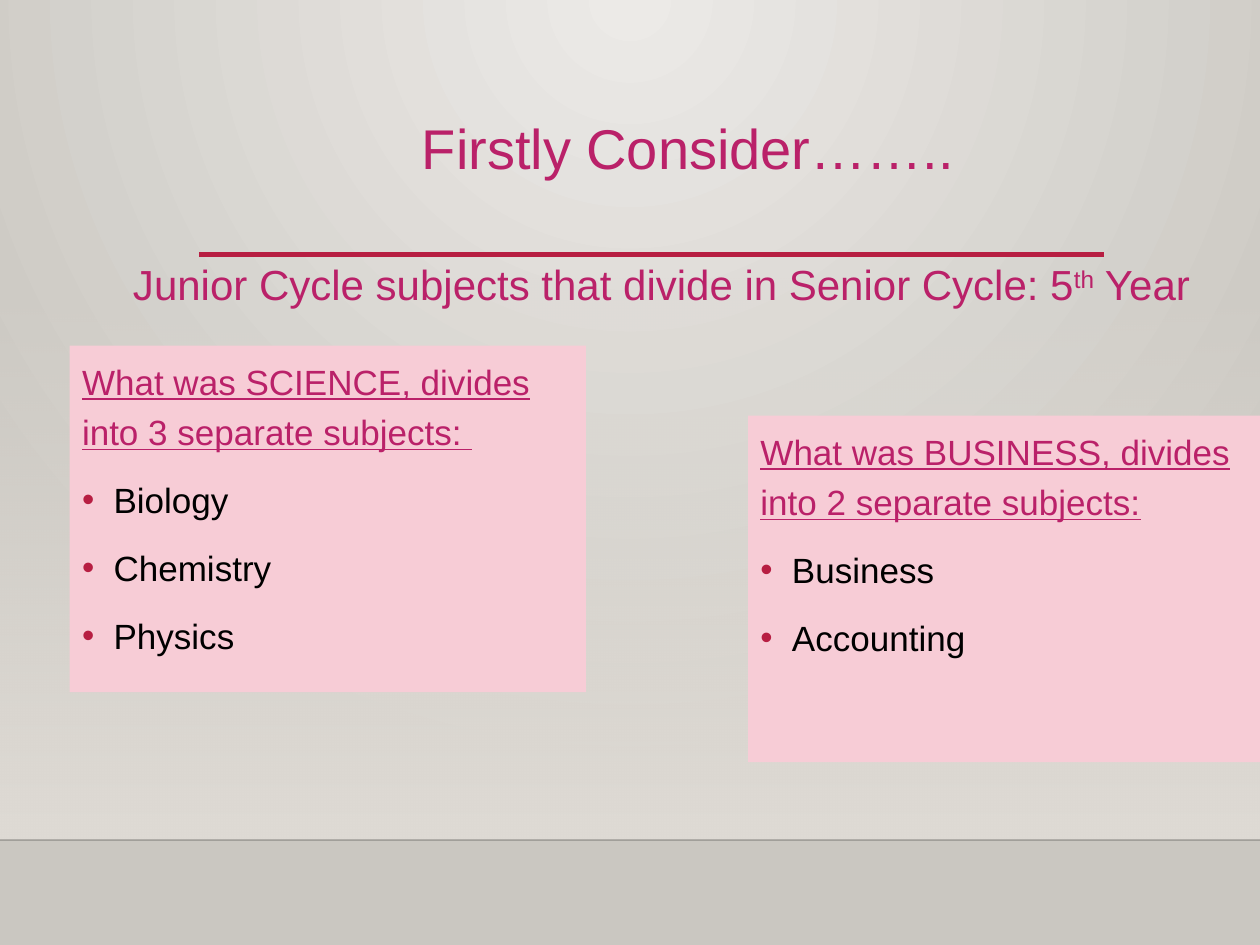
from dataclasses import dataclass

from pptx import Presentation
from pptx.dml.color import RGBColor
from pptx.enum.shapes import MSO_CONNECTOR, MSO_SHAPE
from pptx.enum.text import MSO_ANCHOR, PP_ALIGN
from pptx.oxml import parse_xml
from pptx.oxml.ns import nsdecls, qn
from pptx.oxml.xmlchemy import OxmlElement
from pptx.slide import Slide
from pptx.text.text import Font, TextFrame, _Paragraph
from pptx.util import Pt

PAGE_WIDTH, PAGE_HEIGHT = 720, 540
FLOOR_TOP = 480
FONT_NAME = "Arial"
MAGENTA = RGBColor(0xBA, 0x21, 0x69)
CRIMSON = RGBColor(0xB7, 0x1E, 0x42)
PINK = RGBColor(0xF7, 0xCC, 0xD6)
BLACK = RGBColor(0x00, 0x00, 0x00)
BACKGROUND_LIGHT = RGBColor(0xEC, 0xEA, 0xE7)
BACKGROUND_DARK = RGBColor(0xCA, 0xC7, 0xC1)
WALL = RGBColor(0xDF, 0xDB, 0xD5)


@dataclass
class SubjectPanel:
    left: float
    top: float
    width: float
    heading: str
    subjects: list[str]
    height: float = 198


PANELS = [
    SubjectPanel(39.8, 197.5, 295, "What was SCIENCE, divides into 3 separate subjects: ",
                 ["Biology", "Chemistry", "Physics"]),
    SubjectPanel(427.5, 237.5, 304.5, "What was BUSINESS, divides into 2 separate subjects:",
                 ["Business", "Accounting"]),
]


def set_gradient(properties, start: RGBColor, end: RGBColor, direction: str, start_alpha: int = 100) -> None:
    """Replace the gradient already present in the given properties element."""
    old = properties.find(qn("a:gradFill"))
    new = parse_xml(
        f'<a:gradFill {nsdecls("a")} rotWithShape="1"><a:gsLst>'
        f'<a:gs pos="0"><a:srgbClr val="{start}"><a:alpha val="{start_alpha * 1000}"/></a:srgbClr></a:gs>'
        f'<a:gs pos="100000"><a:srgbClr val="{end}"/></a:gs>'
        f'</a:gsLst>{direction}</a:gradFill>')
    properties.replace(old, new)


def style_font(font: Font, size: float, color: RGBColor, underline: bool = False) -> None:
    font.name = FONT_NAME
    font.size = Pt(size)
    font.color.rgb = color
    font.underline = underline


def add_line(slide: Slide, left: float, right: float, top: float, color: RGBColor, weight: float,
             alpha: int = 100) -> None:
    line = slide.shapes.add_connector(MSO_CONNECTOR.STRAIGHT, Pt(left), Pt(top), Pt(right), Pt(top))
    line.line.color.rgb = color
    line.line.width = Pt(weight)
    properties = line._element.spPr
    if alpha < 100:
        opacity = OxmlElement("a:alpha")
        opacity.set("val", str(alpha * 1000))
        properties.find(".//" + qn("a:srgbClr")).append(opacity)
    properties.append(OxmlElement("a:effectLst"))


def add_text_box(slide: Slide, left: float, top: float, width: float, height: float) -> TextFrame:
    box = slide.shapes.add_textbox(Pt(left), Pt(top), Pt(width), Pt(height))
    box.text_frame.word_wrap = True
    return box.text_frame


def add_bullet(para: _Paragraph) -> None:
    properties = para._p.get_or_add_pPr()
    properties.set("marL", str(Pt(18)))
    properties.set("indent", str(-Pt(18)))
    properties.append(parse_xml(f'<a:buClr {nsdecls("a")}><a:srgbClr val="{CRIMSON}"/></a:buClr>'))
    properties.append(parse_xml(f'<a:buFont {nsdecls("a")} typeface="{FONT_NAME}"/>'))
    properties.append(parse_xml(f'<a:buChar {nsdecls("a")} char="•"/>'))


def add_panel(slide: Slide, panel: SubjectPanel) -> None:
    box = slide.shapes.add_shape(MSO_SHAPE.RECTANGLE, Pt(panel.left), Pt(panel.top),
                                 Pt(panel.width), Pt(panel.height))
    box.shadow.inherit = False
    box.fill.solid()
    box.fill.fore_color.rgb = PINK
    box.line.fill.background()
    frame = box.text_frame
    frame.word_wrap = True
    frame.vertical_anchor = MSO_ANCHOR.TOP
    frame.text = "\n".join([panel.heading, *panel.subjects])
    for index, para in enumerate(frame.paragraphs):
        para.alignment = PP_ALIGN.LEFT
        para.line_spacing = 1.2
        is_heading = index == 0
        if not is_heading:
            para.space_before = Pt(10)
            add_bullet(para)
        style_font(para.runs[0].font, 20, MAGENTA if is_heading else BLACK, is_heading)


def add_backdrop(slide: Slide) -> None:
    slide.background.fill.gradient()
    set_gradient(slide._element.cSld.bg.bgPr, BACKGROUND_LIGHT, BACKGROUND_DARK,
                 '<a:path path="circle"><a:fillToRect l="43000" r="43000" b="100000"/></a:path>')
    wall_top = 158.4
    wall = slide.shapes.add_shape(MSO_SHAPE.RECTANGLE, Pt(0), Pt(wall_top),
                                  Pt(PAGE_WIDTH), Pt(FLOOR_TOP - wall_top))
    wall.shadow.inherit = False
    wall.line.fill.background()
    wall.fill.gradient()
    set_gradient(wall._element.spPr, WALL, WALL, '<a:lin ang="5400000" scaled="0"/>', start_alpha=0)
    add_line(slide, 0, PAGE_WIDTH, FLOOR_TOP, BLACK, 1, alpha=20)
    add_line(slide, 113.75, 631, 145.5, CRIMSON, 2.5)


def add_titles(slide: Slide) -> None:
    # Subtitle with a raised ordinal
    para = add_text_box(slide, 51, 147.5, 654, 46).paragraphs[0]
    para.alignment = PP_ALIGN.CENTER
    para.line_spacing = 0.9
    for text in ("Junior Cycle subjects that divide in Senior Cycle: 5", "th", " Year"):
        span = para.add_run()
        span.text = text
        style_font(span.font, 24, MAGENTA)
        if text == "th":
            span.font._element.set("baseline", "30000")

    # Main heading
    frame = add_text_box(slide, 234, 61.5, 345.6, 46)
    frame.text = "Firstly Consider…….."
    style_font(frame.paragraphs[0].runs[0].font, 32, MAGENTA)


def main() -> None:
    deck = Presentation()
    deck.slide_width, deck.slide_height = Pt(PAGE_WIDTH), Pt(PAGE_HEIGHT)
    page = deck.slides.add_slide(deck.slide_layouts[6])
    add_backdrop(page)
    add_titles(page)
    for panel in PANELS:
        add_panel(page, panel)
    deck.save("out.pptx")


if __name__ == "__main__":
    main()
